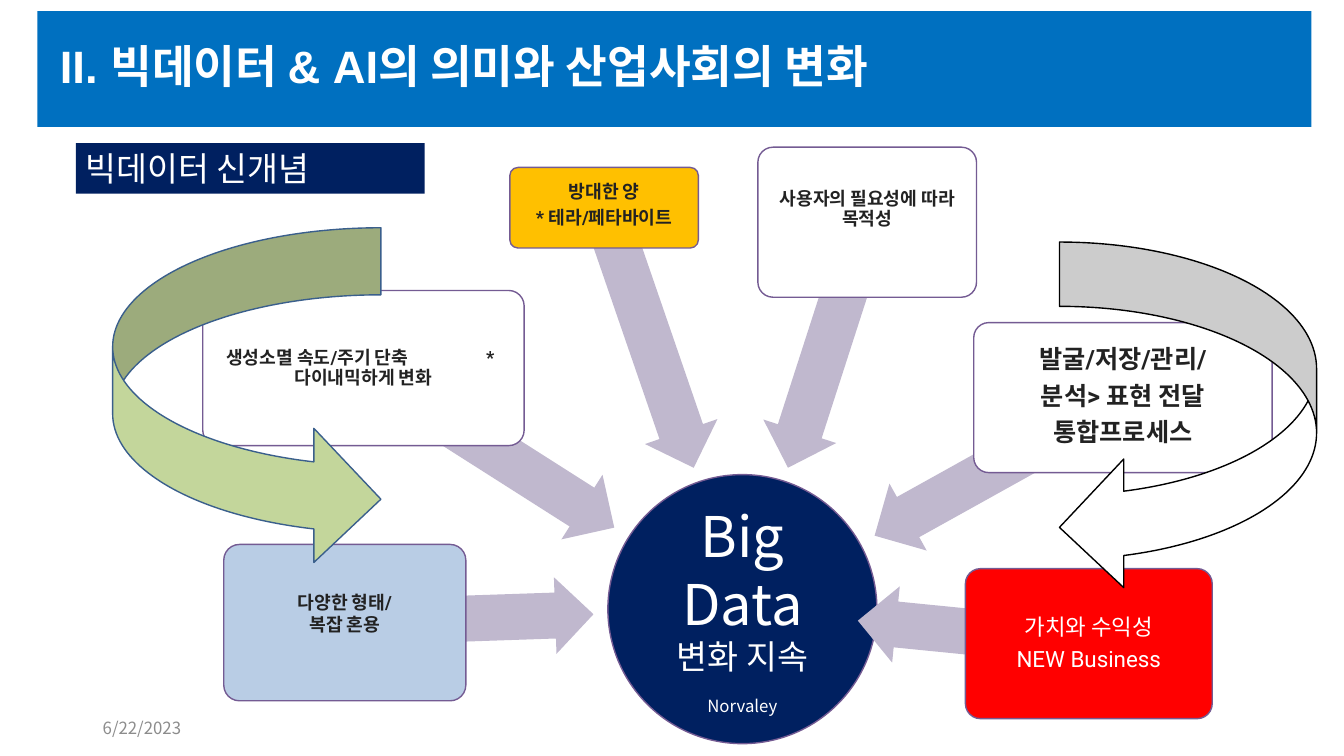
from math import atan2, cos, degrees, sin
from lxml.etree import SubElement
from pptx import Presentation
from pptx.dml.color import RGBColor
from pptx.enum.shapes import MSO_SHAPE
from pptx.enum.text import MSO_ANCHOR, PP_ALIGN
from pptx.oxml.ns import qn
from pptx.util import Cm, Pt

HEX = {
    "white": "FFFFFF", "black": "000000", "navy": "002060", "blue": "0070C0",
    "sky": "B9CDE5", "gold": "FFC000", "red": "FF0000", "green": "C3D69B",
    "steel": "3A5F8C", "purple": "745B93", "lilac": "C0B8CE",
    "ink": "222222", "gray": "8C8C8C",
}
SANS, BODY = "Noto Sans CJK KR", "Roboto"
TITLE = "II. 빅데이터 & AI의 의미와 산업사회의 변화"
LABEL = "빅데이터 신개념"
DATE = "6/22/2023"
HUB = (15.32, 11.96, 6.78, 6.78)
CORE = [("Big Data", 40), ("변화 지속", 24), ("Norvaley", 12)]
THICK = 1.93
TAB = 6.55

BOXES = [
    dict(at=(5.64, 13.72, 6.1, 3.94), reach=6.27, skip=0, fill="sky",
         lines=["다양한 형태/", "복잡 혼용"], size=13, top=1.06, pitch=1, gap=0),
    dict(at=(5.11, 7.32, 8.1, 3.91), reach=7.49, skip=0, fill="white",
         lines=["생성소멸 속도/주기 단축\t*", "다이내믹하게 변화"],
         size=13, top=1.36, pitch=0.9, gap=0),
    dict(at=(12.85, 4.22, 4.75, 2.03), reach=6.93, skip=0, fill="gold",
         lines=["방대한 양", "* 테라/페타바이트"], size=13, top=0.33, pitch=0.9, gap=0.35),
    dict(at=(19.1, 3.71, 5.51, 3.78), reach=6.5, skip=0, fill="white",
         lines=["사용자의 필요성에 따라 목적성"], size=13, top=0.97, pitch=0.9, gap=0.35),
    dict(at=(24.54, 8.13, 7.52, 3.78), reach=7.16, skip=0, fill="white",
         lines=["발굴/저장/관리/", "분석> 표현 전달", "통합프로세스"],
         size=18, top=0.51, pitch=0.9, gap=0.35),
    dict(at=(24.33, 14.33, 6.22, 3.78), reach=5.11, skip=0.74, fill="red",
         lines=["가치와 수익성", "NEW Business"], size=16, top=1.08, pitch=0.9, gap=0.35),
]
CURVES = [
    (MSO_SHAPE.CURVED_LEFT_ARROW, (26.7, 6.1, 6.48, 8.81), "white", "black"),
    (MSO_SHAPE.CURVED_RIGHT_ARROW, (2.84, 5.74, 6.76, 8.53), "green", "steel"),
]


def rgb(name):
    return RGBColor.from_string(HEX[name])


def draw(kind, at, fill, line=None):
    shape = slide.shapes.add_shape(kind, *map(Cm, at))
    shape.shadow.inherit = False
    shape.fill.solid()
    shape.fill.fore_color.rgb = rgb(fill)
    if line:
        shape.line.color.rgb = rgb(line)
        shape.line.width = Pt(1)
    else:
        shape.line.fill.background()
    return shape


def pad(frame, side, top, anchor):
    frame.word_wrap = True
    frame.margin_left = frame.margin_right = Cm(side)
    frame.margin_top, frame.margin_bottom = Cm(top), Cm(0)
    frame.vertical_anchor = anchor


def style(para, size, color, face, bold=False, align=PP_ALIGN.LEFT, pitch=1, gap=0):
    para.alignment = align
    para.line_spacing = float(pitch)
    para.space_before = Pt(0)
    para.space_after = Pt(round(gap * size, 1))
    for run in para.runs:
        run.font.size, run.font.bold = Pt(size), bold
        run.font.name = face
        run.font.color.rgb = rgb(color)


def middle(at):
    left, top, wide, high = at
    return left + wide / 2, top + high / 2


def spoke(box):
    x, y = middle(box["at"])
    hubx, huby = middle(HUB)
    turn = atan2(y - huby, x - hubx)
    away = box["skip"] + box["reach"] / 2
    x, y = x - away * cos(turn), y - away * sin(turn)
    at = x - box["reach"] / 2, y - THICK / 2, box["reach"], THICK
    arrow = draw(MSO_SHAPE.LEFT_ARROW, at, "lilac")
    arrow.adjustments[0], arrow.adjustments[1] = 0.6, 0.5
    arrow.rotation = degrees(turn) % 360


def card(box):
    shape = draw(MSO_SHAPE.ROUNDED_RECTANGLE, box["at"], box["fill"], "purple")
    shape.adjustments[0] = 0.1
    frame = shape.text_frame
    tabbed = "\t" in box["lines"][0]
    pad(frame, 0.48 if tabbed else 0.19, box["top"], MSO_ANCHOR.TOP)
    frame.text = "\n".join(box["lines"])
    vivid = box["fill"] == "red"
    for para in frame.paragraphs:
        split = "\t" in para.text
        style(para, box["size"], "white" if vivid else "ink", BODY, not vivid,
              PP_ALIGN.LEFT if split else PP_ALIGN.CENTER, box["pitch"], box["gap"])
        if split:
            stops = SubElement(para._p.get_or_add_pPr(), qn("a:tabLst"))
            SubElement(stops, qn("a:tab"), pos=str(Cm(TAB)), algn="l")


deck = Presentation()
deck.slide_width, deck.slide_height = Cm(33.87), Cm(19.05)
slide = deck.slides.add_slide(deck.slide_layouts[5])

title = slide.shapes.title
title.left, title.top, title.width, title.height = map(Cm, (0.94, 0.28, 32.11, 2.92))
title.fill.solid()
title.fill.fore_color.rgb = rgb("blue")
title.text_frame.text = TITLE
pad(title.text_frame, 0.57, 0, MSO_ANCHOR.MIDDLE)
style(title.text_frame.paragraphs[0], 32.4, "white", "Arial", True, pitch=0.9)

date = slide.shapes.add_textbox(*map(Cm, (2.34, 18.03, 4.88, 0.64)))
date.text_frame.text = DATE
pad(date.text_frame, 0.25, 0, MSO_ANCHOR.MIDDLE)
style(date.text_frame.paragraphs[0], 12, "gray", SANS)

hub = draw(MSO_SHAPE.OVAL, HUB, "navy", "purple")
hub.text_frame.text = "\n".join(text for text, size in CORE)
pad(hub.text_frame, 0, 0, MSO_ANCHOR.MIDDLE)
for para, (text, size) in zip(hub.text_frame.paragraphs, CORE):
    style(para, size, "white", SANS, align=PP_ALIGN.CENTER)
para.space_before = Pt(14)

for box in BOXES:
    spoke(box)
    card(box)

label = draw(MSO_SHAPE.RECTANGLE, (1.91, 3.61, 8.79, 1.27), "navy")
label.text_frame.text = LABEL
pad(label.text_frame, 0.25, 0, MSO_ANCHOR.MIDDLE)
style(label.text_frame.paragraphs[0], 24, "white", SANS)

for kind, at, fill, line in CURVES:
    draw(kind, at, fill, line)

deck.save("out.pptx")
